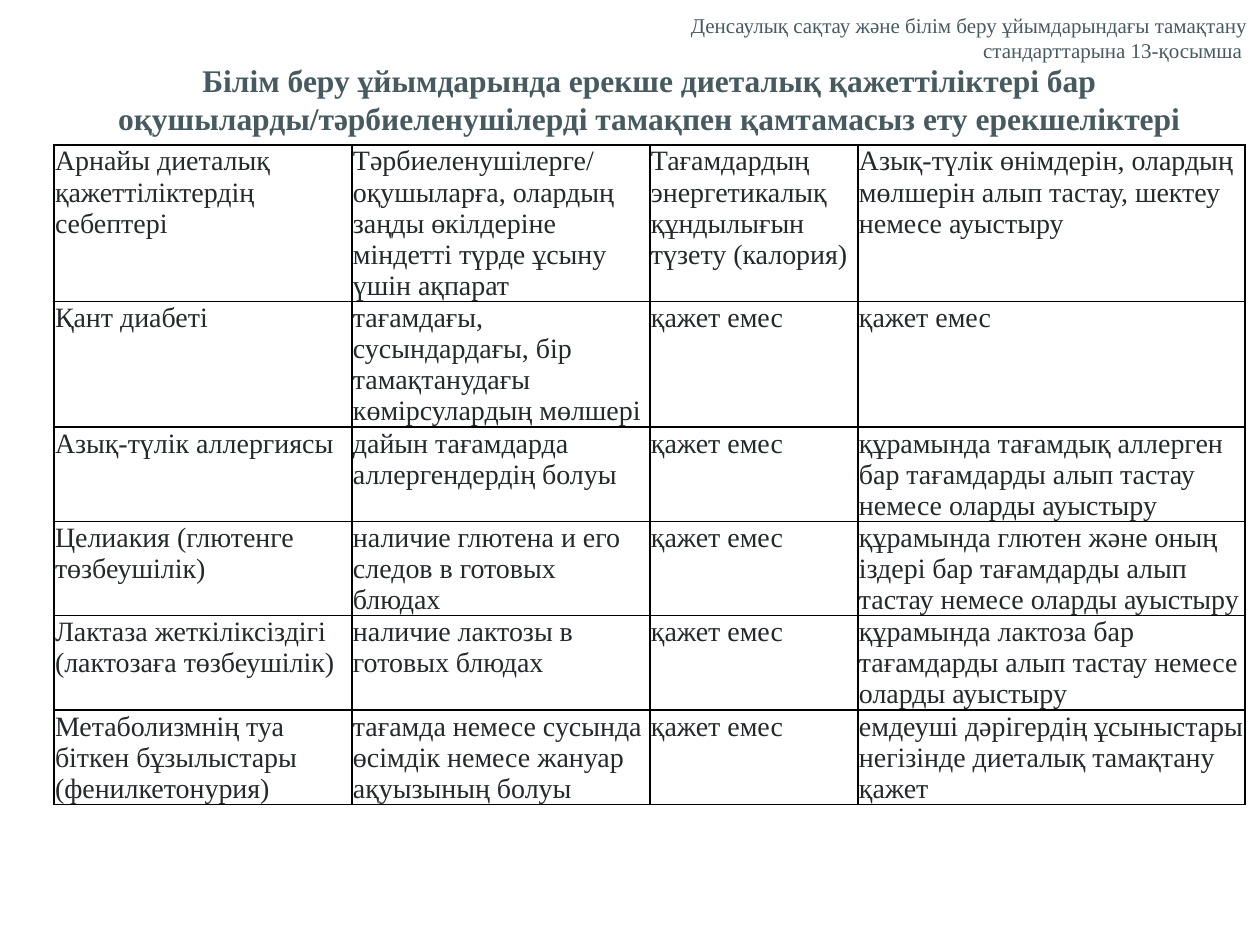
import dataclasses

import lxml.etree
import pptx
import pptx.dml.color
import pptx.enum.text
import pptx.oxml.ns
import pptx.util

PX_PER_INCH = 126
ALIGN = pptx.enum.text.PP_ALIGN


@dataclasses.dataclass(frozen=True)
class Theme:
    font: str = "Times New Roman"
    heading: str = "475A60"
    body: str = "24292B"
    border: str = "000000"
    note_size: int = 12
    title_size: int = 18
    cell_size: int = 16
    border_width: int = 1


THEME = Theme()

NOTE = "Денсаулық сақтау және білім беру ұйымдарындағы тамақтану стандарттарына 13-қосымша "
TITLE = ("Білім беру ұйымдарында ерекше диеталық қажеттіліктері бар "
         "оқушыларды/тәрбиеленушілерді тамақпен қамтамасыз ету ерекшеліктері")
NOT_NEEDED = "қажет емес"
DIET_ROWS = [
    ["Арнайы диеталық қажеттіліктердің себептері",
     "Тәрбиеленушілерге/оқушыларға, олардың заңды өкілдеріне міндетті түрде ұсыну үшін ақпарат",
     "Тағамдардың энергетикалық құндылығын түзету (калория)",
     "Азық-түлік өнімдерін, олардың мөлшерін алып тастау, шектеу немесе ауыстыру"],
    ["Қант диабеті",
     "тағамдағы, сусындардағы, бір тамақтанудағы көмірсулардың мөлшері",
     NOT_NEEDED,
     NOT_NEEDED],
    ["Азық-түлік аллергиясы",
     "дайын тағамдарда аллергендердің болуы",
     NOT_NEEDED,
     "құрамында тағамдық аллерген бар тағамдарды алып тастау немесе оларды ауыстыру"],
    ["Целиакия (глютенге төзбеушілік)",
     "наличие глютена и его следов в готовых блюдах",
     NOT_NEEDED,
     "құрамында глютен және оның іздері бар тағамдарды алып тастау немесе оларды ауыстыру"],
    ["Лактаза жеткіліксіздігі (лактозаға төзбеушілік)",
     "наличие лактозы в готовых блюдах",
     NOT_NEEDED,
     "құрамында лактоза бар тағамдарды алып тастау немесе оларды ауыстыру"],
    ["Метаболизмнің туа біткен бұзылыстары (фенилкетонурия)",
     "тағамда немесе сусында өсімдік немесе жануар ақуызының болуы",
     NOT_NEEDED,
     "емдеуші дәрігердің ұсыныстары негізінде диеталық тамақтану қажет"],
]
COLUMN_WIDTHS = [298, 298, 208, 387]
LINES_PER_ROW = [5, 4, 3, 3, 3, 3]
LINE_HEIGHT = 31


def px(length):
    return pptx.util.Emu(round(length * 914400 / PX_PER_INCH))


def add_run(paragraph, wording, size, color, bold=False):
    run = paragraph.add_run()
    run.text = wording
    run.font.name = THEME.font
    run.font.size = pptx.util.Pt(size)
    run.font.bold = bold
    run.font.color.rgb = pptx.dml.color.RGBColor.from_string(color)


def add_heading(slide, box, wording, size, align, bold=False):
    frame = slide.shapes.add_textbox(*map(px, box)).text_frame
    frame.word_wrap = True
    paragraph = frame.paragraphs[0]
    paragraph.alignment = align
    add_run(paragraph, wording, size, THEME.heading, bold)


def set_borders(cell):
    """Draw all four sides; the schema wants them ahead of the cell's fill."""
    properties = cell._tc.get_or_add_tcPr()
    qn = pptx.oxml.ns.qn
    for position, side in enumerate(("a:lnL", "a:lnR", "a:lnT", "a:lnB")):
        line = lxml.etree.Element(qn(side), w=str(pptx.util.Pt(THEME.border_width)))
        fill = lxml.etree.SubElement(line, qn("a:solidFill"))
        lxml.etree.SubElement(fill, qn("a:srgbClr"), val=THEME.border)
        properties.insert(position, line)


def fill_cell(cell, wording):
    cell.margin_left = cell.margin_right = cell.margin_top = px(1)
    cell.margin_bottom = 0
    cell.fill.background()
    set_borders(cell)
    add_run(cell.text_frame.paragraphs[0], wording, THEME.cell_size, THEME.body)


def add_diet_table(slide, left, top):
    heights = [lines * LINE_HEIGHT for lines in LINES_PER_ROW]
    table = slide.shapes.add_table(
        len(DIET_ROWS), len(COLUMN_WIDTHS),
        px(left), px(top), px(sum(COLUMN_WIDTHS)), px(sum(heights))).table
    table.first_row = table.horz_banding = False
    for column, width in zip(table.columns, COLUMN_WIDTHS):
        column.width = px(width)
    for row, height, wordings in zip(table.rows, heights, DIET_ROWS):
        row.height = px(height)
        for cell, wording in zip(row.cells, wordings):
            fill_cell(cell, wording)


def main():
    presentation = pptx.Presentation()
    presentation.slide_width = px(1260)
    presentation.slide_height = px(945)
    slide = presentation.slides.add_slide(presentation.slide_layouts[6])
    add_diet_table(slide, 54, 145)
    add_heading(slide, (630, 6, 630, 63), NOTE, THEME.note_size, ALIGN.RIGHT)
    add_heading(slide, (54, 55, 1191, 89), TITLE, THEME.title_size, ALIGN.CENTER, bold=True)
    presentation.save("out.pptx")


if __name__ == "__main__":
    main()
